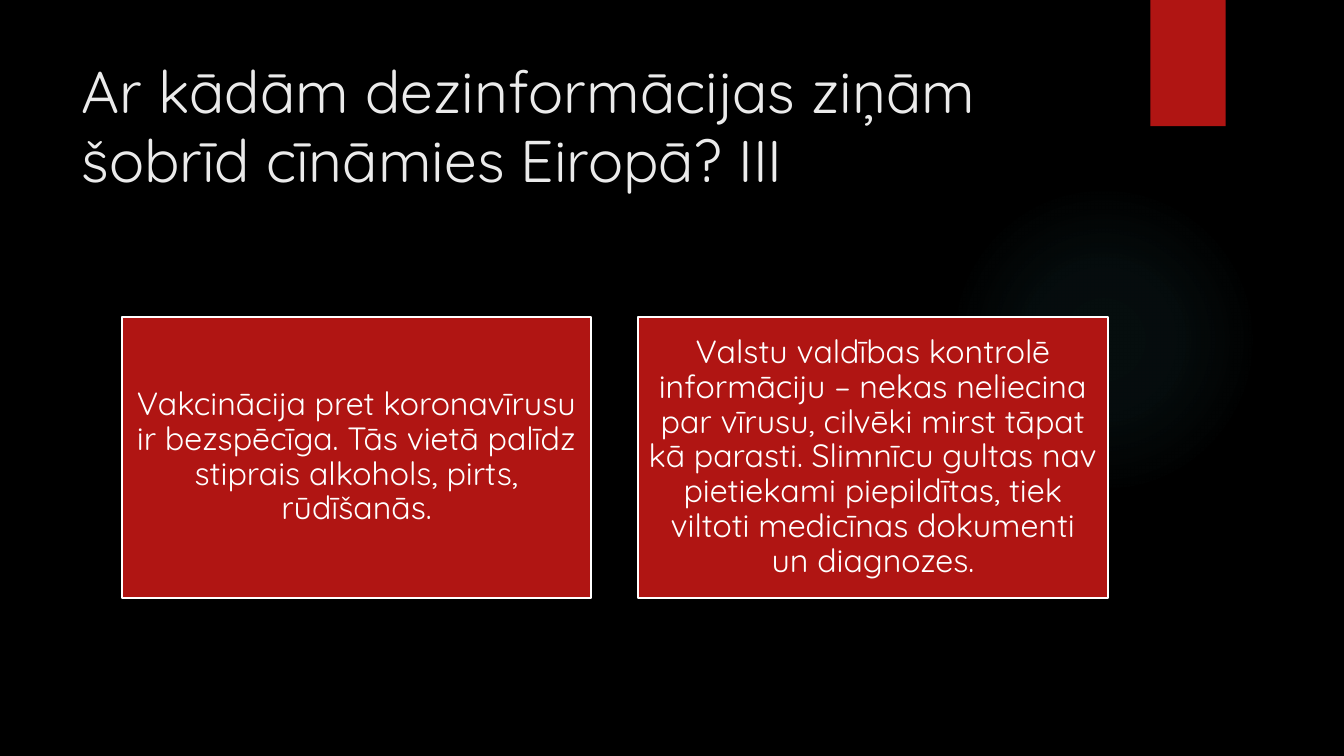
from lxml import etree
from pptx import Presentation
from pptx.dml.color import RGBColor
from pptx.enum.shapes import MSO_SHAPE
from pptx.enum.text import MSO_ANCHOR, PP_ALIGN
from pptx.oxml import parse_xml
from pptx.util import Cm, Pt

BLACK = RGBColor(0x00, 0x00, 0x00)
WHITE = RGBColor(0xFF, 0xFF, 0xFF)
OFF_WHITE = RGBColor(0xEB, 0xEB, 0xEB)
RED = RGBColor(0xB0, 0x15, 0x13)
TEAL = RGBColor(0x50, 0xB9, 0xC1)

RECTANGLE, OVAL = MSO_SHAPE.RECTANGLE, MSO_SHAPE.OVAL
MIDDLE, CENTER, LEFT = MSO_ANCHOR.MIDDLE, PP_ALIGN.CENTER, PP_ALIGN.LEFT

FONT = "Quicksand"
DRAWING_NS = "http://schemas.openxmlformats.org/drawingml/2006/main"
GLOW_STOPS = [(0, 7), (36, 6), (69, 0)]  # position %, opacity %
CLAIMS = [
    "Vakcinācija pret koronavīrusu ir bezspēcīga. Tās vietā palīdz "
    "stiprais alkohols, pirts, rūdīšanās.",
    "Valstu valdības kontrolē informāciju – nekas neliecina par vīrusu, "
    "cilvēki mirst tāpat kā parasti. Slimnīcu gultas nav pietiekami "
    "piepildītas, tiek viltoti medicīnas dokumenti un diagnozes.",
]


def add_block(slide, kind, left, top, width, height):
    """Plain red shape without line or shadow."""
    block = slide.shapes.add_shape(kind, left, top, width, height)
    block.shadow.inherit = False
    block.fill.solid()
    block.fill.fore_color.rgb = RED
    block.line.fill.background()
    return block


def add_glow(slide, left, top, size):
    """Faint teal light that fades out from its centre."""
    glow = add_block(slide, OVAL, left, top, size, size)
    stops = "".join(
        f'<a:gs pos="{pos * 1000}"><a:srgbClr val="{TEAL}">'
        f'<a:alpha val="{opacity * 1000}"/></a:srgbClr></a:gs>'
        for pos, opacity in GLOW_STOPS
    )
    gradient = parse_xml(
        f'<a:gradFill xmlns:a="{DRAWING_NS}" rotWithShape="1">'
        f'<a:gsLst>{stops}</a:gsLst><a:path path="circle">'
        '<a:fillToRect l="50000" t="50000" r="50000" b="50000"/>'
        '</a:path></a:gradFill>'
    )
    properties = glow.element.spPr
    solid = properties.find(etree.QName(DRAWING_NS, "solidFill").text)
    properties.replace(solid, gradient)


def add_title(slide, left, top, width, height, text):
    title = slide.shapes.title
    title.left, title.top, title.width, title.height = left, top, width, height
    frame = title.text_frame
    frame.text = text
    frame.word_wrap = True
    frame.vertical_anchor = MIDDLE
    heading = frame.paragraphs[0]
    heading.alignment = LEFT
    heading.line_spacing = 0.97
    heading.font.name = FONT
    heading.font.size = Pt(42)
    heading.font.color.rgb = OFF_WHITE


def add_claims(slide, left, top, width, height, claims, gap):
    """Row of equal cards, one for each claim."""
    card_width = int((width - gap * (len(claims) - 1)) / len(claims))
    for index, text in enumerate(claims):
        card_left = left + index * (card_width + gap)
        card = add_block(slide, RECTANGLE, card_left, top, card_width, height)
        card.line.color.rgb = WHITE
        card.line.width = Pt(1.5)
        frame = card.text_frame
        frame.text = text
        frame.word_wrap = True
        frame.vertical_anchor = MIDDLE
        frame.margin_left = frame.margin_right = Cm(0.25)
        frame.margin_top = frame.margin_bottom = Cm(0.25)
        claim = frame.paragraphs[0]
        claim.alignment = CENTER
        claim.line_spacing = 0.9
        claim.font.name = FONT
        claim.font.size = Pt(23)
        claim.font.color.rgb = WHITE


def main():
    deck = Presentation()
    deck.slide_width, deck.slide_height = Cm(33.87), Cm(19.05)
    slide = deck.slides.add_slide(deck.slide_layouts[5])
    slide.background.fill.solid()
    slide.background.fill.fore_color.rgb = BLACK

    # Backdrop: glow and ribbon
    add_glow(slide, Cm(23.9), Cm(4.65), Cm(7.82))
    add_block(slide, RECTANGLE, Cm(28.99), Cm(0), Cm(1.9), Cm(3.18))

    # Content: title and claim cards
    add_title(slide, Cm(1.8), Cm(1.27), Cm(26.14), Cm(3.89),
              "Ar kādām dezinformācijas ziņām šobrīd cīnāmies Eiropā? III")
    add_claims(slide, Cm(3.07), Cm(7.98), Cm(24.85), Cm(7.09), CLAIMS, Cm(1.18))

    deck.save("out.pptx")


if __name__ == "__main__":
    main()
